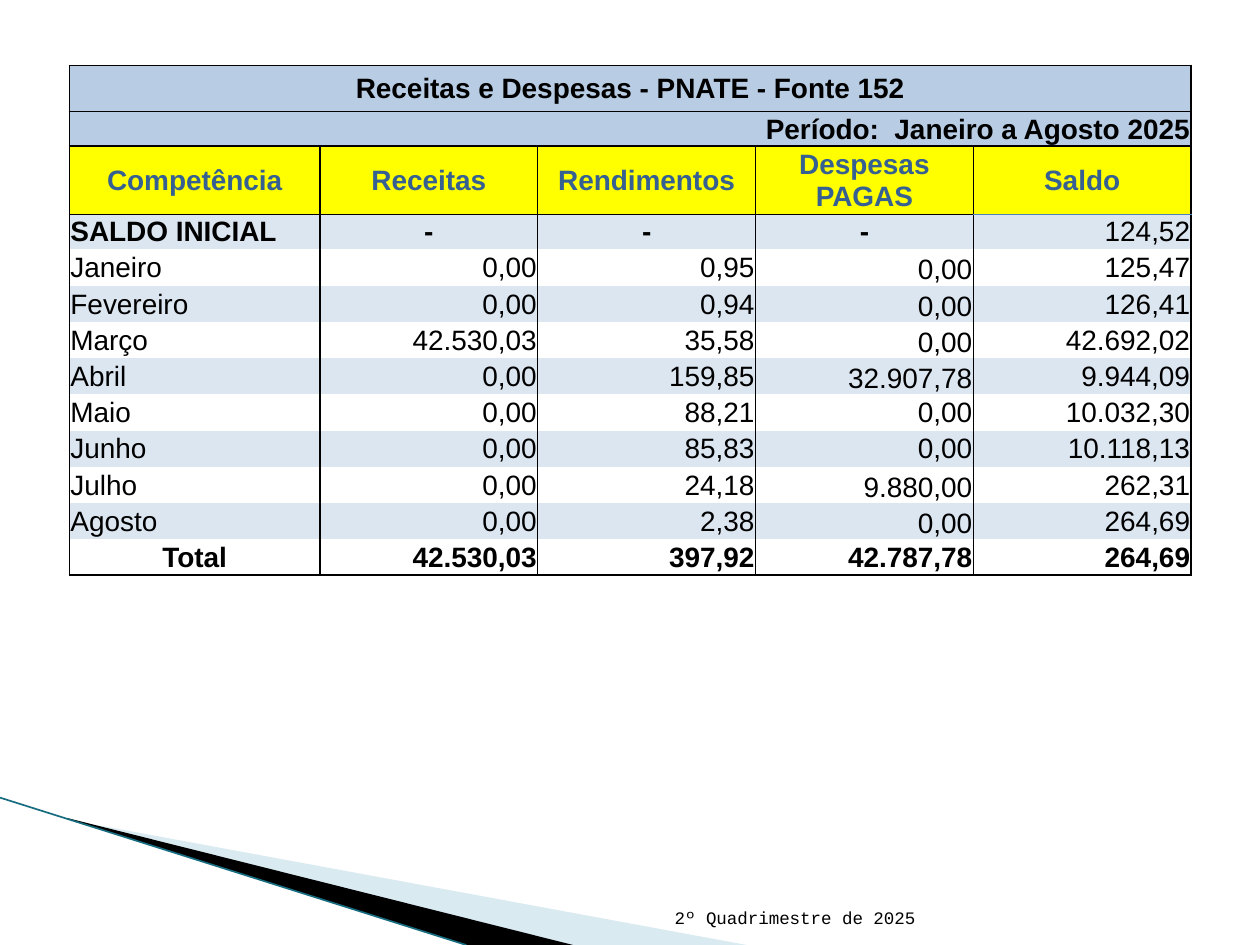
"""Build the PNATE revenue and expense slide."""
from lxml.etree import SubElement
from pptx import Presentation
from pptx.dml.color import RGBColor
from pptx.enum.shapes import MSO_CONNECTOR
from pptx.enum.text import MSO_ANCHOR, PP_ALIGN
from pptx.oxml.ns import qn
from pptx.util import Cm, Pt

BLACK = RGBColor(0, 0, 0)
BLUE = RGBColor(0xB8, 0xCC, 0xE4)
PALE = RGBColor(0xDC, 0xE6, 0xF1)
YELLOW = RGBColor(0xFF, 0xFF, 0x00)
NAVY = RGBColor(0x36, 0x60, 0x92)
EDGE = RGBColor(0x4F, 0x81, 0xBD)
SKY = RGBColor(0xA0, 0xCB, 0xDC)
TEAL = RGBColor(0x17, 0x6C, 0x80)

LEFT, MID, RIGHT = PP_ALIGN.LEFT, PP_ALIGN.CENTER, PP_ALIGN.RIGHT
TITLE = "Receitas e Despesas - PNATE - Fonte 152"
PERIOD = "Período:  Janeiro a Agosto 2025"
HEADS = ["Competência", "Receitas", "Rendimentos", "Despesas PAGAS", "Saldo"]
START = ["SALDO INICIAL", "-", "-", "-", "124,52"]
MONTHS = [
    ["Janeiro", "0,00", "0,95", "0,00", "125,47"],
    ["Fevereiro", "0,00", "0,94", "0,00", "126,41"],
    ["Março", "42.530,03", "35,58", "0,00", "42.692,02"],
    ["Abril", "0,00", "159,85", "32.907,78", "9.944,09"],
    ["Maio", "0,00", "88,21", "0,00", "10.032,30"],
    ["Junho", "0,00", "85,83", "0,00", "10.118,13"],
    ["Julho", "0,00", "24,18", "9.880,00", "262,31"],
    ["Agosto", "0,00", "2,38", "0,00", "264,69"],
]
TOTAL = ["Total", "42.530,03", "397,92", "42.787,78", "264,69"]
WIDTHS = [5.05] + [4.39] * 4
HEIGHTS = [0.93, 0.64, 1.29, 0.65, 0.74] + [0.73] * 7 + [0.72]


def write(frame, text, font="Arial", size=16, color=BLACK, bold=False, align=LEFT):
    """Put formatted text in a text frame."""
    para = frame.paragraphs[0]
    para.alignment = align
    run = para.add_run()
    run.text = text
    run.font.name = font
    run.font.size = Pt(size)
    run.font.bold = bold
    run.font.color.rgb = color


def border(cell, sides, tints):
    """Draw the named cell sides and clear the others."""
    props = cell._tc.get_or_add_tcPr()
    for side in "LRTB":
        tint = tints.get(side, BLACK)
        width = Pt(1 if tint == BLACK else 0.5)
        line = SubElement(props, qn(f"a:ln{side}"), w=str(width))
        if side in sides:
            fill = SubElement(line, qn("a:solidFill"))
            SubElement(fill, qn("a:srgbClr"), val=str(tint))
        else:
            SubElement(line, qn("a:noFill"))


class Board:
    """Hold the slide and its drawing style."""

    def __init__(self, slide):
        """Keep the current slide."""
        self.slide = slide
        self.inset = Cm(0.02)

    def wedge(self, points, color, alpha=None):
        """Draw a filled outline without a line."""
        spots = [(Cm(x), Cm(y)) for x, y in points]
        pen = self.slide.shapes.build_freeform(*spots[0])
        pen.add_line_segments(spots[1:], close=True)
        shape = pen.convert_to_shape()
        shape.shadow.inherit = False
        shape.line.fill.background()
        shape.fill.solid()
        shape.fill.fore_color.rgb = color
        if alpha:
            tone = shape.fill._xPr.find(".//" + qn("a:srgbClr"))
            SubElement(tone, qn("a:alpha"), val=str(alpha * 1000))

    def line(self, start, end, color, width):
        """Draw a straight line."""
        ends = [Cm(n) for n in (*start, *end)]
        line = self.slide.shapes.add_connector(MSO_CONNECTOR.STRAIGHT, *ends)
        line.line.color.rgb = color
        line.line.width = Pt(width)
        SubElement(line._element.spPr, qn("a:effectLst"))

    def label(self, box, text, **form):
        """Add a text box anchored at its foot."""
        frame = self.slide.shapes.add_textbox(*map(Cm, box)).text_frame
        frame.word_wrap = True
        frame.vertical_anchor = MSO_ANCHOR.BOTTOM
        write(frame, text, **form)

    def table(self, left, top):
        """Add an unstyled grid with its sizes."""
        box = map(Cm, (left, top, sum(WIDTHS), sum(HEIGHTS)))
        table = self.slide.shapes.add_table(len(HEIGHTS), len(WIDTHS), *box).table
        table.first_row = table.horz_banding = False
        for col, width in zip(table.columns, WIDTHS):
            col.width = Cm(width)
        for row, height in zip(table.rows, HEIGHTS):
            row.height = Cm(height)
        return table

    def cell(self, cell, text, fill=None, sides="LR", tints=None,
             anchor=MSO_ANCHOR.MIDDLE, **form):
        """Fill one table cell."""
        cell.margin_left = cell.margin_right = cell.margin_top = self.inset
        cell.margin_bottom = 0
        cell.vertical_anchor = anchor
        border(cell, sides, tints or {})
        if fill:
            cell.fill.solid()
            cell.fill.fore_color.rgb = fill
        else:
            cell.fill.background()
        if text:
            write(cell.text_frame, text, **form)


def fill_table(board, table):
    """Write the headings, months and totals."""
    last = len(WIDTHS) - 1
    for row, (text, align) in enumerate([(TITLE, MID), (PERIOD, RIGHT)]):
        table.cell(row, 0).merge(table.cell(row, last))
        for col in range(last + 1):
            board.cell(table.cell(row, col), "" if col else text, BLUE, "LRTB",
                       bold=True, align=align)
    for col in range(last + 1):
        end = col == last
        side = RIGHT if col else LEFT
        board.cell(table.cell(2, col), HEADS[col], YELLOW, "LRTB",
                   {"B": EDGE} if end else None, color=NAVY, bold=True, align=MID)
        board.cell(table.cell(3, col), START[col], PALE, "LRT",
                   {"T": EDGE} if end else None, bold=not end,
                   align=MID if 0 < col < last else side)
        for num, month in enumerate(MONTHS):
            low = col == 3 and month[0] not in ("Maio", "Junho")
            board.cell(table.cell(num + 4, col), month[col], PALE if num % 2 else None,
                       anchor=MSO_ANCHOR.BOTTOM if low else MSO_ANCHOR.MIDDLE, align=side)
        board.cell(table.cell(12, col), TOTAL[col], sides="LRB", bold=True,
                   align=RIGHT if col else MID)


def main():
    """Build and save the slide."""
    deck = Presentation()
    deck.slide_width, deck.slide_height = Cm(25.4), Cm(19.05)
    board = Board(deck.slides.add_slide(deck.slide_layouts[6]))
    board.wedge([(1.4, 16.53), (15.05, 19.05), (11.5, 19.05), (1.4, 16.51)], SKY, 40)
    board.wedge([(1.35, 16.49), (11.55, 19.05), (9.4, 19.05), (1.37, 16.51)], BLACK)
    board.line((0, 16.08), (9.4, 19.05), TEAL, 0.95)
    board.label((12.17, 17.81, 6.53, 1.02), "2º Quadrimestre de 2025",
                font="Courier New", size=10, align=RIGHT)
    fill_table(board, board.table(1.4, 1.32))
    deck.save("out.pptx")


if __name__ == "__main__":
    main()
